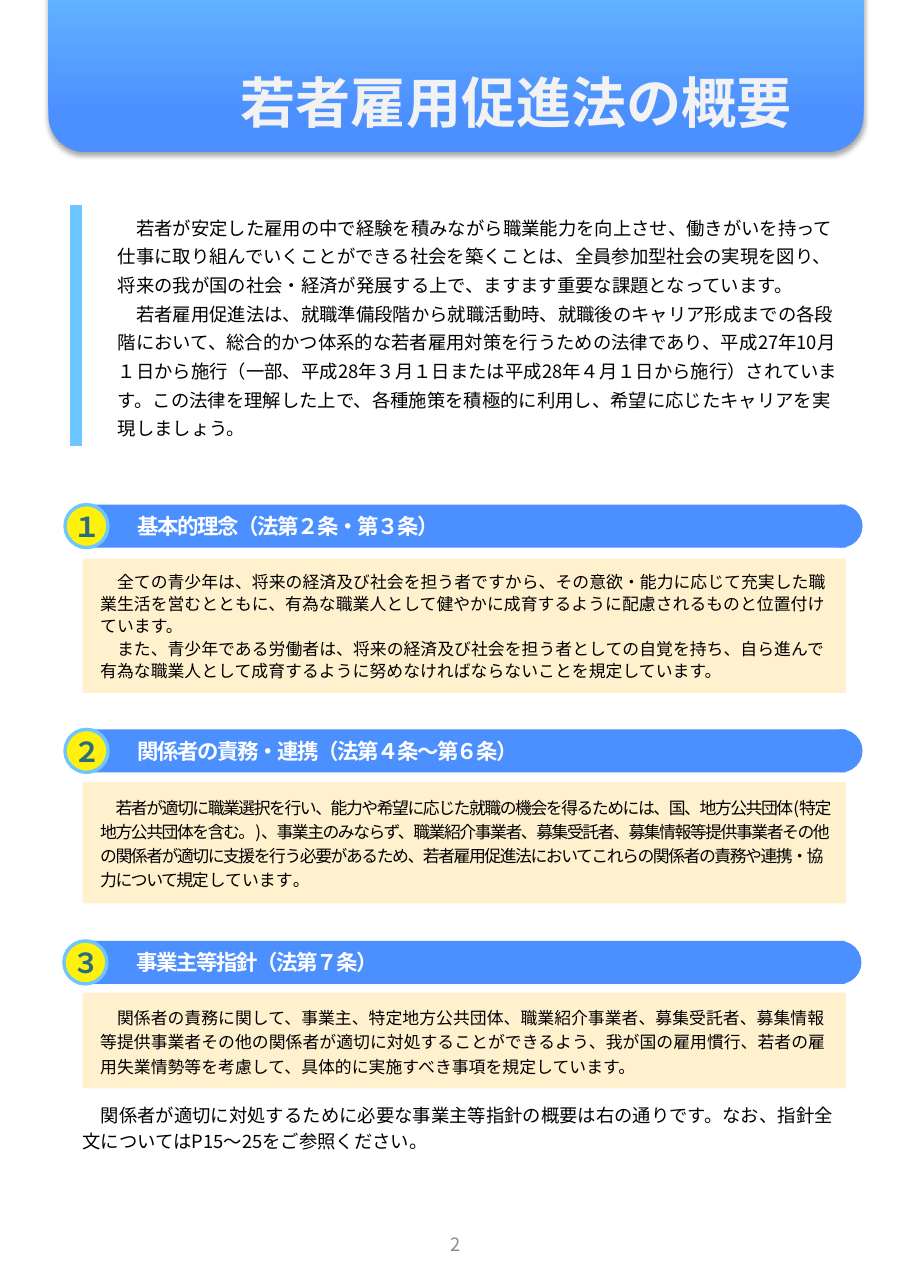
from lxml import etree
from pptx import Presentation, util as u
from pptx.dml.color import RGBColor
from pptx.enum import lang, shapes, text
from pptx.oxml.ns import qn

FONT = "Noto Sans CJK JP"
COLORS = {
    "blue": "4C8FFF", "sky": "6DC6FF", "cream": "FFF1CE", "yellow": "FFF10C",
    "teal": "2A6D7D", "black": "000000", "white": "FFFFFF",
    "title": "F2F2F2", "gray": "8C8C8C",
}
BODY_INSETS = (0.16, 0.1, 0.08, 0.1)
PLAIN_INSETS = (0, 0.05, 0, 0.05)
BAR_HEIGHT = 0.39

INTRODUCTION = [
    "　若者が安定した雇用の中で経験を積みながら職業能力を向上させ、働きがいを持って仕事に取り組んでいくことができる社会を築くことは、全員参加型社会の実現を図り、将来の我が国の社会・経済が発展する上で、ますます重要な課題となっています。",
    "　若者雇用促進法は、就職準備段階から就職活動時、就職後のキャリア形成までの各段階において、総合的かつ体系的な若者雇用対策を行うための法律であり、平成27年10月１日から施行（一部、平成28年３月１日または平成28年４月１日から施行）されています。この法律を理解した上で、各種施策を積極的に利用し、希望に応じたキャリアを実現しましょう。",
]
# Each paragraph is a string, or a list of (text, character spacing in points)
SECTIONS = [
    {"number": "１", "title": "基本的理念（法第２条・第３条）", "left": 0.79, "top": 4.58,
     "body_top": 5.07, "body_height": 1.22, "line_spacing": 1.1, "body": [
         "　全ての青少年は、将来の経済及び社会を担う者ですから、その意欲・能力に応じて充実した職業生活を営むとともに、有為な職業人として健やかに成育するように配慮されるものと位置付けています。",
         "　また、青少年である労働者は、将来の経済及び社会を担う者としての自覚を持ち、自ら進んで有為な職業人として成育するように努めなければならないことを規定しています。"]},
    {"number": "２", "title": "関係者の責務・連携（法第４条～第６条）", "left": 0.79, "top": 6.62,
     "body_top": 7.1, "body_height": 1.1, "line_spacing": 1.2, "body": [[
         ("　若者が適切に職業選択を行い、能力や希望に応じた就職の機会を得るためには、国、地方公共団体(特定地方公共団体を含む。)、事業主のみならず、職業紹介事業者、募集受託者、募集情報等提供事業者その他の関係者が適切に支援を行う必要があるため、若者雇用促進法においてこれらの関係者の責務や連携・協力について規定", -1),
         ("しています", 0), ("。", -1)]]},
    {"number": "３", "title": "事業主等指針（法第７条）", "left": 0.78, "top": 8.54,
     "body_top": 9.01, "body_height": 0.87, "line_spacing": 1.2, "body": [
         "　関係者の責務に関して、事業主、特定地方公共団体、職業紹介事業者、募集受託者、募集情報等提供事業者その他の関係者が適切に対処することができるよう、我が国の雇用慣行、若者の雇用失業情勢等を考慮して、具体的に実施すべき事項を規定しています。"]},
]
CLOSING = "　関係者が適切に対処するために必要な事業主等指針の概要は右の通りです。なお、指針全文についてはP15〜25をご参照ください。"


def rgb(name):
    return RGBColor.from_string(COLORS[name])


def set_attributes(target, values):
    for name, value in values.items():
        setattr(target, name, value)


def write_run(paragraph, content, spacing, size, color, bold):
    run = paragraph.add_run()
    run.text = content
    set_attributes(run.font, {
        "name": FONT, "size": u.Pt(size), "bold": bold,
        "language_id": lang.MSO_LANGUAGE_ID.JAPANESE,
    })
    run.font.color.rgb = rgb(color)
    properties = run.font._element
    etree.SubElement(properties, qn("a:ea")).set("typeface", FONT)
    if spacing:
        properties.set("spc", str(spacing * 100))


def write_text(shape, paragraphs, size, color, insets=BODY_INSETS, bold=False, spacing=0,
               line_spacing=1.0, align=text.PP_ALIGN.LEFT, anchor=text.MSO_ANCHOR.TOP):
    frame = shape.text_frame
    sides = ("margin_left", "margin_top", "margin_right", "margin_bottom")
    set_attributes(frame, {"word_wrap": True, "vertical_anchor": anchor})
    set_attributes(frame, {side: u.Inches(inset) for side, inset in zip(sides, insets)})
    for index, content in enumerate(paragraphs):
        paragraph = frame.add_paragraph() if index else frame.paragraphs[0]
        set_attributes(paragraph, {"alignment": align, "line_spacing": line_spacing})
        runs = [(content, spacing)] if isinstance(content, str) else content
        for run_text, run_spacing in runs:
            write_run(paragraph, run_text, run_spacing, size, color, bold)


def add_text(slide, box, paragraphs, size, color, **layout):
    shape = slide.shapes.add_textbox(*map(u.Inches, box))
    write_text(shape, paragraphs, size, color, **layout)


def add_block(slide, kind, box, fill, outline=None):
    shape = slide.shapes.add_shape(kind, *map(u.Inches, box))
    shape.shadow.inherit = False
    shape.fill.solid()
    shape.fill.fore_color.rgb = rgb(fill)
    if outline:
        shape.line.color.rgb = rgb(outline)
        shape.line.width = u.Pt(2.25)
    else:
        shape.line.fill.background()
    return shape


def add_drop_shadow(shape):
    effects = shape._element.spPr.find(qn("a:effectLst"))
    shadow = etree.SubElement(effects, qn("a:outerShdw"))
    values = {"blurRad": u.Pt(3.1), "dist": u.Pt(1.8), "dir": 90 * 60000, "rotWithShape": 0}
    for name, value in values.items():
        shadow.set(name, str(int(value)))
    color = etree.SubElement(shadow, qn("a:srgbClr"))
    color.set("val", COLORS["black"])
    etree.SubElement(color, qn("a:alpha")).set("val", "35000")


def add_banner(slide, title):
    kinds = shapes.MSO_SHAPE
    banner = add_block(slide, kinds.ROUNDED_RECTANGLE, (0.44, -0.61, 7.4, 1.99), "blue")
    banner.fill.gradient()
    banner.fill.gradient_angle = 90
    for stop, position, color in zip(banner.fill.gradient_stops, (0.16, 1), ("blue", "sky")):
        stop.position = position
        stop.color.rgb = rgb(color)
    add_drop_shadow(banner)
    add_text(slide, (0.76, 0.57, 6.85, 0.71), [title], 36, "title", bold=True,
             insets=(1.1, 0.05, 0.1, 0.05), align=text.PP_ALIGN.CENTER)


def add_accent_line(slide, x, top, bottom):
    line = slide.shapes.add_connector(
        shapes.MSO_CONNECTOR.STRAIGHT, *map(u.Inches, (x, top, x, bottom)))
    line.line.color.rgb = rgb("sky")
    line.line.width = u.Pt(8)
    etree.SubElement(line._element.spPr, qn("a:effectLst"))


def add_section(slide, section):
    kinds = shapes.MSO_SHAPE
    left, top = section["left"], section["top"]
    middle = text.MSO_ANCHOR.MIDDLE

    # Heading bar with its numbered badge and rounded end
    bar = add_block(slide, kinds.RECTANGLE, (left, top, 6.89, BAR_HEIGHT), "blue")
    write_text(bar, [section["title"]], 14, "white", bold=True, spacing=-1,
               insets=(0.46, 0.05, 0.1, 0.05), anchor=middle)
    badge = add_block(slide, kinds.OVAL, (left - 0.2, top, BAR_HEIGHT, BAR_HEIGHT),
                      "yellow", "sky")
    write_text(badge, [section["number"]], 18, "teal", bold=True, insets=(0, 0.02, 0, 0.02),
               align=text.PP_ALIGN.CENTER, anchor=middle)
    badge.text_frame._txBody.bodyPr.set("vert", "eaVert")
    add_block(slide, kinds.OVAL, (left + 6.65, top, BAR_HEIGHT, BAR_HEIGHT), "blue")

    # Explanation panel
    panel = add_block(slide, kinds.RECTANGLE,
                      (0.75, section["body_top"], 6.93, section["body_height"]), "cream")
    write_text(panel, section["body"], 11, "black", line_spacing=section["line_spacing"])


def main():
    presentation = Presentation()
    set_attributes(presentation, {"slide_width": u.Inches(8.27), "slide_height": u.Inches(11.69)})
    slide = presentation.slides.add_slide(presentation.slide_layouts[6])

    # Title and introduction
    add_banner(slide, "若者雇用促進法の概要")
    add_accent_line(slide, 0.69, 1.86, 4.05)
    add_text(slide, (1.07, 1.86, 6.61, 2.19), INTRODUCTION, 12, "black",
             insets=PLAIN_INSETS, line_spacing=1.3)

    # Numbered sections
    for section in SECTIONS:
        add_section(slide, section)

    # Closing note and page number
    add_text(slide, (0.75, 9.93, 6.92, 0.59), [CLOSING], 12, "black",
             insets=PLAIN_INSETS, line_spacing=1.2)
    add_text(slide, (3.26, 10.92, 1.75, 0.75), ["2"], 12, "gray",
             insets=PLAIN_INSETS, align=text.PP_ALIGN.CENTER, anchor=text.MSO_ANCHOR.MIDDLE)

    presentation.save("out.pptx")


if __name__ == "__main__":
    main()
